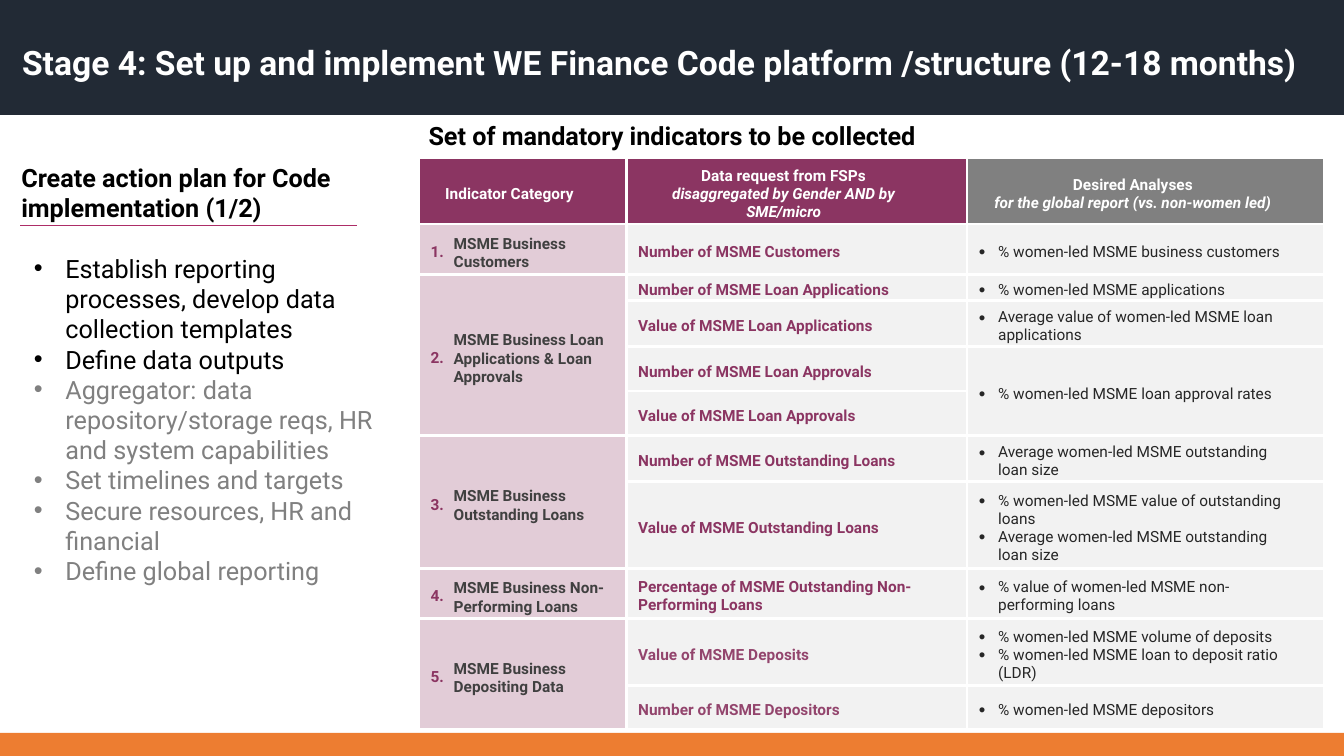
from lxml import etree
from pptx import Presentation
from pptx.dml.color import RGBColor
from pptx.enum.shapes import MSO_CONNECTOR, MSO_SHAPE
from pptx.enum.text import MSO_ANCHOR, MSO_AUTO_SIZE, PP_ALIGN
from pptx.oxml.ns import qn
from pptx.util import Pt

MIDDLE, TOP = MSO_ANCHOR.MIDDLE, MSO_ANCHOR.TOP
LEFT, CENTER = PP_ALIGN.LEFT, PP_ALIGN.CENTER
NO_AUTOFIT = MSO_AUTO_SIZE.NONE

FONT = "Roboto"
WHITE, BLACK, GREY = "FFFFFF", "000000", "808080"
PLUM, LIGHT_PLUM, SOFT_PLUM = "8B3562", "E2CCD7", "93456D"
NAVY, ORANGE, RULE_PINK = "222A35", "ED7D31", "AD2D67"
CELL_GREY, CHARCOAL, LABEL_GREY = "F2F2F2", "262626", "404040"

TITLE = "Stage 4: Set up and implement WE Finance Code platform /structure (12-18 months)"
TABLE_HEADING = "Set of mandatory indicators to be collected"
PLAN_HEADING = "Create action plan for Code implementation (1/2)"
PLAN_STEPS = [
    ("Establish reporting processes, develop data collection templates", BLACK),
    ("Define data outputs", BLACK),
    ("Aggregator: data repository/storage reqs, HR and system capabilities", GREY),
    ("Set timelines and targets", GREY),
    ("Secure resources, HR and financial", GREY),
    ("Define global reporting", GREY),
]
HEADERS = [
    ("Indicator Category", "", PLUM),
    ("Data request from FSPs", "disaggregated by Gender AND by SME/micro", PLUM),
    ("Desired Analyses", "for the global report (vs. non-women led)", GREY),
]
# Category, request colour, then (row height, request, analyses);
# a row without analyses shares those of the row above.
CATEGORIES = [
    ("MSME Business Customers", PLUM, [
        (36, "Number of MSME Customers", ["% women-led MSME business customers"])]),
    ("MSME Business Loan Applications & Loan Approvals", PLUM, [
        (18.7, "Number of MSME Loan Applications", ["% women-led MSME applications"]),
        (33, "Value of MSME Loan Applications",
         ["Average value of women-led MSME loan applications"]),
        (31.7, "Number of MSME Loan Approvals", ["% women-led MSME loan approval rates"]),
        (31.7, "Value of MSME Loan Approvals", [])]),
    ("MSME Business Outstanding Loans", PLUM, [
        (33, "Number of MSME Outstanding Loans",
         ["Average women-led MSME outstanding loan size"]),
        (62, "Value of MSME Outstanding Loans",
         ["% women-led MSME value of outstanding loans",
          "Average women-led MSME outstanding loan size"])]),
    ("MSME Business Non-Performing Loans", PLUM, [
        (36, "Percentage of MSME Outstanding Non-Performing Loans",
         ["% value of women-led MSME non-performing loans"])]),
    ("MSME Business Depositing Data", SOFT_PLUM, [
        (47.5, "Value of MSME Deposits",
         ["% women-led MSME volume of deposits",
          "% women-led MSME loan to deposit ratio (LDR)"]),
        (31.7, "Number of MSME Depositors", ["% women-led MSME depositors"])]),
]
SLIDE_W, SLIDE_H = 960, 540
TITLE_H, FOOTER_H = 82, 16.5
TABLE_X, TABLE_Y, HEADER_H = 299, 112.5, 47.5
COLUMN_WIDTHS = [148.3, 243.4, 255.6]
CELL_TOP = 4.3
LABEL_X, LABEL_W, LABEL_H = 317, 134.6, 34


def color(hex_string):
    return RGBColor.from_string(hex_string)


def place(shape, x, y, width, height):
    shape.left, shape.top, shape.width, shape.height = Pt(x), Pt(y), Pt(width), Pt(height)


def style(paragraph, size, hex_string, bold=True):
    for run in paragraph.runs:
        run.font.name, run.font.size, run.font.bold = FONT, Pt(size), bold
        run.font.color.rgb = color(hex_string)


def indent(paragraph, left, first=0, bullet_percent=0):
    """Set the indents, and a round bullet if it has a size."""
    properties = paragraph._p.get_or_add_pPr()
    properties.set("marL", str(Pt(left)))
    properties.set("indent", str(Pt(first)))
    if bullet_percent:
        etree.SubElement(properties, qn("a:buSzPct"), val=str(bullet_percent * 1000))
        etree.SubElement(properties, qn("a:buFont"), typeface="Arial")
        etree.SubElement(properties, qn("a:buChar"), char="•")
    else:
        etree.SubElement(properties, qn("a:buNone"))


def add_band(slide, y, height, fill):
    """Add a full-width band behind the title."""
    band = slide.shapes.add_shape(MSO_SHAPE.RECTANGLE, 0, Pt(y), Pt(SLIDE_W), Pt(height))
    band.shadow.inherit = False
    band.fill.solid()
    band.fill.fore_color.rgb = color(fill)
    band.line.fill.background()
    slide.shapes.title.element.addprevious(band.element)


def add_label(slide, text, x, y, width, height, size, hex_string):
    label = slide.shapes.add_textbox(Pt(x), Pt(y), Pt(width), Pt(height))
    frame = label.text_frame
    frame.word_wrap, frame.vertical_anchor = True, MIDDLE
    frame.text = text
    style(frame.paragraphs[0], size, hex_string)


def format_cell(cell, fill):
    cell.margin_left = cell.margin_bottom = 0
    cell.margin_top, cell.margin_right = Pt(CELL_TOP), Pt(27)
    cell.vertical_anchor = MIDDLE
    properties = cell._tc.get_or_add_tcPr()
    for side in ("lnL", "lnR", "lnT", "lnB"):
        border = etree.SubElement(properties, qn(f"a:{side}"), w=str(Pt(2.25)))
        solid = etree.SubElement(border, qn("a:solidFill"))
        etree.SubElement(solid, qn("a:srgbClr"), val=WHITE)
    cell.fill.solid()
    cell.fill.fore_color.rgb = color(fill)


def add_plan(body):
    place(body, 8, 112.5, 273.6, 356)
    frame = body.text_frame
    frame.auto_size, frame.vertical_anchor = NO_AUTOFIT, TOP
    frame.text = PLAN_HEADING
    heading = frame.paragraphs[0]
    indent(heading, 0)
    heading.space_before = Pt(0)
    style(heading, 18, BLACK)
    for index, (step, hex_string) in enumerate(PLAN_STEPS):
        paragraph = frame.add_paragraph()
        paragraph.text = step
        indent(paragraph, 31.5, -22.5, 100)
        paragraph.space_before = Pt(0 if index else 21.5)
        style(paragraph, 18, hex_string, bold=False)


def add_indicators(slide):
    heights = [HEADER_H] + [row[0] for _, _, rows in CATEGORIES for row in rows]
    table = slide.shapes.add_table(
        len(heights), len(COLUMN_WIDTHS), Pt(TABLE_X), Pt(TABLE_Y),
        Pt(sum(COLUMN_WIDTHS)), Pt(sum(heights))).table
    table.first_row = table.horz_banding = False
    for column, width in zip(table.columns, COLUMN_WIDTHS):
        column.width = Pt(width)
    for row, height in zip(table.rows, heights):
        row.height = Pt(height)

    for index, (heading, detail, fill) in enumerate(HEADERS):
        cell = table.cell(0, index)
        format_cell(cell, fill)
        paragraph = cell.text_frame.paragraphs[0]
        paragraph.text = heading
        if detail:
            paragraph.add_line_break()
            detail_run = paragraph.add_run()
            detail_run.text = detail
            detail_run.font.italic = True
        indent(paragraph, 8.6)
        paragraph.alignment = CENTER
        style(paragraph, 11, WHITE)

    first = 1
    for number, (category, request_color, rows) in enumerate(CATEGORIES, 1):
        last = first + len(rows) - 1
        for row, (_, request, analyses) in enumerate(rows, first):
            number_cell, request_cell, analysis_cell = (table.cell(row, c) for c in range(3))
            format_cell(number_cell, LIGHT_PLUM)
            format_cell(request_cell, CELL_GREY)
            format_cell(analysis_cell, CELL_GREY)
            request_cell.text_frame.text = request
            paragraph = request_cell.text_frame.paragraphs[0]
            indent(paragraph, 8.6)
            style(paragraph, 11, request_color)
            if not analyses:
                table.cell(row - 1, 2).merge(analysis_cell)
                continue
            analysis_cell.text_frame.text = "\n".join(analyses)
            for paragraph in analysis_cell.text_frame.paragraphs:
                indent(paragraph, 22.3, -13.7, 121)
                style(paragraph, 11, CHARCOAL, bold=False)
        number_cell = table.cell(first, 0)
        if last > first:
            number_cell.merge(table.cell(last, 0))
        number_cell.text_frame.text = f"{number}."
        paragraph = number_cell.text_frame.paragraphs[0]
        indent(paragraph, 23, -14.4)
        style(paragraph, 11, PLUM)

        middle = TABLE_Y + sum(heights[:first]) + sum(heights[first:last + 1]) / 2
        add_label(slide, category, LABEL_X, middle + CELL_TOP / 2 - LABEL_H / 2,
                  LABEL_W, LABEL_H, 11, LABEL_GREY)
        first = last + 1


def main():
    deck = Presentation()
    deck.slide_width, deck.slide_height = Pt(SLIDE_W), Pt(SLIDE_H)
    slide = deck.slides.add_slide(deck.slide_layouts[1])
    add_band(slide, SLIDE_H - FOOTER_H, FOOTER_H, ORANGE)
    add_band(slide, 0, TITLE_H, NAVY)

    title = slide.shapes.title
    place(title, 0, 0, 946, TITLE_H)
    title.text_frame.text = TITLE
    title.text_frame.auto_size, title.text_frame.vertical_anchor = NO_AUTOFIT, MIDDLE
    paragraph = title.text_frame.paragraphs[0]
    indent(paragraph, 8.6)
    paragraph.alignment, paragraph.line_spacing = LEFT, 1.25
    style(paragraph, 24, WHITE)

    add_plan(slide.placeholders[1])
    add_indicators(slide)
    add_label(slide, TABLE_HEADING, TABLE_X, TITLE_H, 480, 29, 18, BLACK)
    rule = slide.shapes.add_connector(
        MSO_CONNECTOR.STRAIGHT, Pt(14.4), Pt(161.2), Pt(255), Pt(161.2))
    rule.line.color.rgb, rule.line.width = color(RULE_PINK), Pt(0.5)
    etree.SubElement(rule.element.spPr, qn("a:effectLst"))
    deck.save("out.pptx")


if __name__ == "__main__":
    main()
